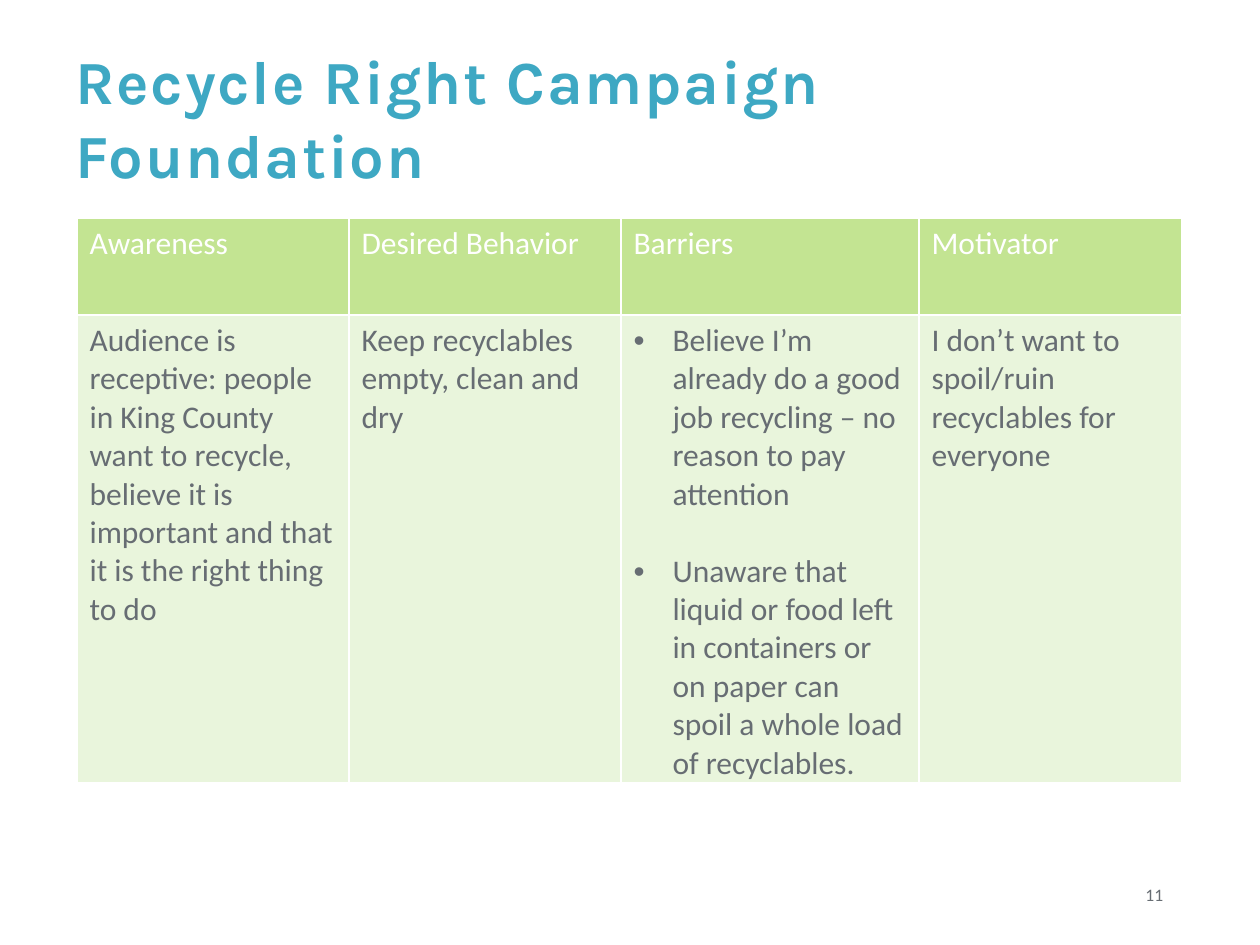
from lxml import etree
from pptx import Presentation
from pptx import util as u
from pptx.dml.color import RGBColor
from pptx.enum import text
from pptx.oxml.ns import qn

HUES = {"title": "3EA8C3", "body": "676D73", "head": "C3E492",
        "cell": "E9F5DC", "white": "FFFFFF"}


def px(n):
    return u.Emu(round(n * 914400 / 126))


def hue(name):
    return RGBColor.from_string(HUES[name])


def write(par, words, size=18, font="Calibri", color="body", bold=False,
          space=0, track=0, bullet=False):
    """Put words in a paragraph with the given format."""
    par.alignment = text.PP_ALIGN.LEFT
    par.space_before = u.Pt(space)
    if bullet:
        props = par._p.get_or_add_pPr()
        props.set("marL", str(px(39)))
        props.set("indent", str(-px(39)))
        etree.SubElement(props, qn("a:buFont")).set("typeface", "Arial")
        etree.SubElement(props, qn("a:buChar")).set("char", "•")
    run = par.add_run()
    run.text = words
    run.font.size = u.Pt(size)
    run.font.name = font
    run.font.bold = bold
    run.font.color.rgb = hue(color)
    if track:
        run._r.get_or_add_rPr().set("spc", str(track))


class Deck:
    def __init__(self, wide, high):
        self.prs = Presentation()
        self.prs.slide_width, self.prs.slide_height = px(wide), px(high)
        self.slide = self.prs.slides.add_slide(self.prs.slide_layouts[5])

    def title(self, words, x, y, w, h):
        box = self.slide.shapes.title
        box.left, box.top, box.width, box.height = map(px, (x, y, w, h))
        frame = box.text_frame
        frame.vertical_anchor = text.MSO_ANCHOR.MIDDLE
        write(frame.paragraphs[0], words, size=35, font="Karla",
              color="title", bold=True, track=100)

    def label(self, words, x, y, w, h, **style):
        box = self.slide.shapes.add_textbox(*map(px, (x, y, w, h)))
        box.text_frame.word_wrap = True
        write(box.text_frame.paragraphs[0], words, **style)

    def border(self, cell):
        props = cell._tc.get_or_add_tcPr()
        for side in "LRTB":
            line = etree.SubElement(props, qn("a:ln" + side), w=str(u.Pt(1)))
            fill = etree.SubElement(line, qn("a:solidFill"))
            etree.SubElement(fill, qn("a:srgbClr"), val=HUES["white"])

    def cell(self, cell, words, fill, color):
        self.border(cell)
        cell.fill.solid()
        cell.fill.fore_color.rgb = hue(fill)
        cell.margin_bottom = 0
        frame = cell.text_frame
        # A list of words becomes bullets, one line apart
        items = words if isinstance(words, list) else [words]
        for i, item in enumerate(items):
            par = frame.add_paragraph() if i else frame.paragraphs[0]
            write(par, item, color=color, space=22 if i else 0,
                  bullet=isinstance(words, list))

    def table(self, rows, x, y, cols, highs):
        grid = self.slide.shapes.add_table(
            len(rows), len(cols), px(x), px(y),
            px(sum(cols)), px(sum(highs))).table
        for col, wide in zip(grid.columns, cols):
            col.width = px(wide)
        for r, row in enumerate(rows):
            grid.rows[r].height = px(highs[r])
            fill, color = ("cell", "body") if r else ("head", "white")
            for c, words in enumerate(row):
                self.cell(grid.cell(r, c), words, fill, color)


ROWS = [
    ["Awareness", "Desired Behavior", "Barriers", "Motivator"],
    ["Audience is receptive: people in King County want to recycle, believe "
     "it is important and that it is the right thing to do",
     "Keep recyclables empty, clean and dry",
     ["Believe I’m already do a good job recycling – no reason to pay "
      "attention",
      "Unaware that liquid or food left in containers or on paper can spoil "
      "a whole load of recyclables."],
     "I don’t want to spoil/ruin recyclables for everyone"],
]


def main():
    deck = Deck(1260, 945)
    # Heading
    deck.title("Recycle Right Campaign Foundation", 63, 38, 1134, 158)
    # Campaign table
    deck.table(ROWS, 77, 218, cols=[272, 272, 298, 263], highs=[97, 466])
    # Page number
    deck.label("11", 1133, 878, 57, 34, size=10)
    deck.prs.save("out.pptx")


if __name__ == "__main__":
    main()
